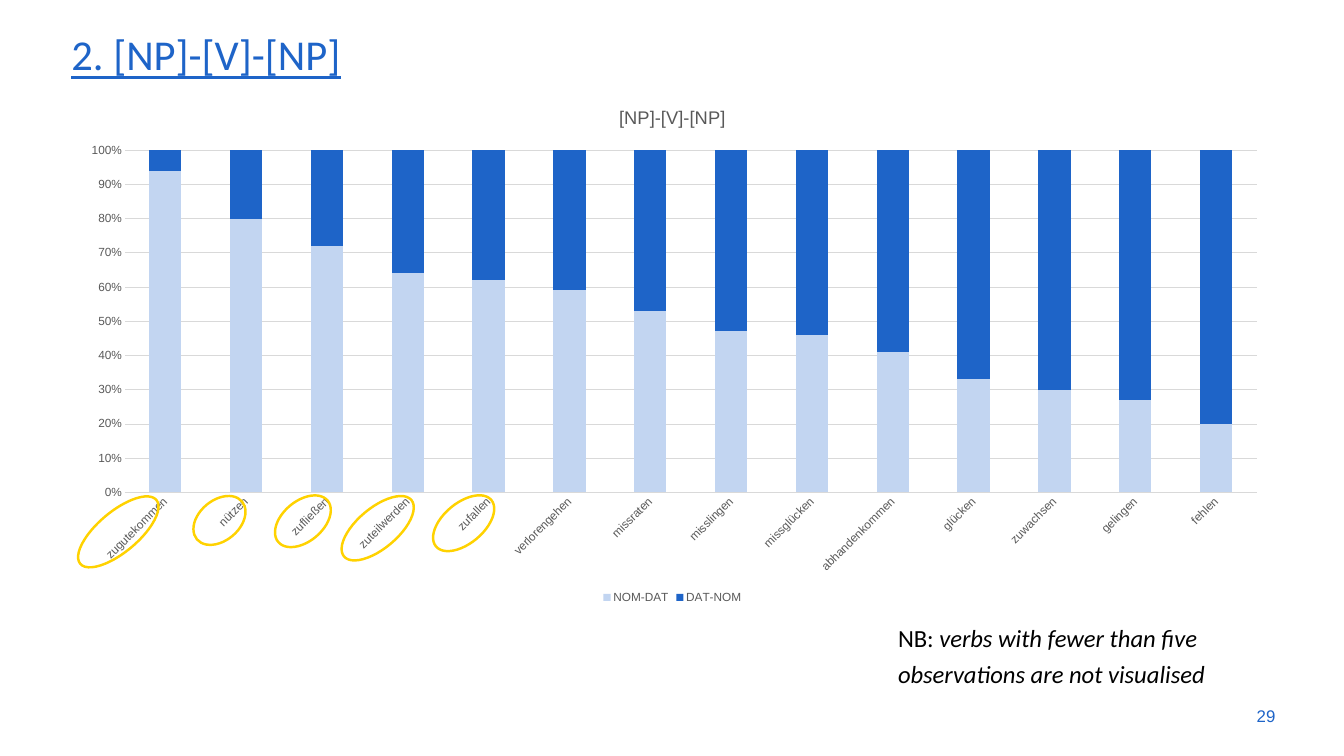
from lxml import etree
from pptx import Presentation
from pptx.chart.data import CategoryChartData
from pptx.dml.color import RGBColor
from pptx.enum.chart import XL_CHART_TYPE, XL_LEGEND_POSITION, XL_TICK_MARK
from pptx.enum.shapes import MSO_SHAPE
from pptx.enum.text import MSO_ANCHOR, PP_ALIGN
from pptx.oxml.ns import qn
from pptx.util import Cm, Pt

STACKED = XL_CHART_TYPE.COLUMN_STACKED_100
BOTTOM = XL_LEGEND_POSITION.BOTTOM
NO_TICK = XL_TICK_MARK.NONE
OVAL = MSO_SHAPE.OVAL
TOP, MIDDLE = MSO_ANCHOR.TOP, MSO_ANCHOR.MIDDLE
LEFT, RIGHT = PP_ALIGN.LEFT, PP_ALIGN.RIGHT

HEX = {"blue": "1E64C8", "pale": "C2D5F1", "gold": "FFD200",
       "grey": "595959", "grid": "D9D9D9", "black": "000000"}

# Share of NOM-DAT order per verb, in percent
SHARES = {"zugutekommen": 94, "nützen": 80, "zufließen": 72,
          "zuteilwerden": 64, "zufallen": 62, "verlorengehen": 59,
          "missraten": 53, "misslingen": 47, "missglücken": 46,
          "abhandenkommen": 41, "glücken": 33, "zuwachsen": 30,
          "gelingen": 27, "fehlen": 20}

# Left, top and width of each ring, in cm
RINGS = [(2.46, 18.34, 3.56), (6.81, 17.93, 2.11), (9.7, 17.96, 2.31),
         (11.96, 18.21, 3.15), (15.32, 18.03, 2.59)]

# Inner plot area as fractions of the chart
PLOT = {"x": 0.05, "y": 0.12, "w": 0.93, "h": 0.66}


def color(name):
    return RGBColor.from_string(HEX[name])


def style(font, size, hue, face="Arial"):
    font.size = Pt(size)
    font.name = face
    font.color.rgb = color(hue)


def add_text(slide, box, parts, size, hue, face, align=LEFT, anchor=TOP,
             space=1.0):
    frame = slide.shapes.add_textbox(*map(Cm, box)).text_frame
    frame.word_wrap = True
    frame.vertical_anchor = anchor
    para = frame.paragraphs[0]
    para.alignment = align
    para.line_spacing = space
    for part in parts:
        run = para.add_run()
        run.text = part
        style(run.font, size, hue, face)
    return para.runs


def add_ring(slide, left, top, width):
    ring = slide.shapes.add_shape(OVAL, Cm(left), Cm(top), Cm(width), Cm(1.45))
    ring.rotation = 320
    ring.shadow.inherit = False
    ring.fill.background()
    ring.line.color.rgb = color("gold")
    ring.line.width = Pt(2.5)


def draw_line(fmt):
    fmt.line.color.rgb = color("grid")
    fmt.line.width = Pt(0.75)


def set_plot(chart):
    """Fix the inner plot area so that the rings meet the labels."""
    area = chart._chartSpace.chart.plotArea
    for old in area.findall(qn("c:layout")):
        area.remove(old)
    layout = etree.Element(qn("c:layout"))
    manual = etree.SubElement(layout, qn("c:manualLayout"))
    rules = {"layoutTarget": "inner", "xMode": "edge", "yMode": "edge", **PLOT}
    for tag, val in rules.items():
        etree.SubElement(manual, qn("c:" + tag)).set("val", str(val))
    area.insert(0, layout)


def add_bars(slide, box):
    data = CategoryChartData(number_format="0")
    data.categories = list(SHARES)
    data.add_series("NOM-DAT", SHARES.values())
    data.add_series("DAT-NOM", [100 - share for share in SHARES.values()])
    chart = slide.shapes.add_chart(STACKED, *map(Cm, box), data).chart
    style(chart.font, 12, "grey")

    # Title and legend
    chart.has_title = True
    title = chart.chart_title.text_frame
    title.text = "[NP]-[V]-[NP]"
    run = title.paragraphs[0].runs[0]
    style(run.font, 18.6, "grey")
    run.font.bold = False
    chart.has_legend = True
    chart.legend.position = BOTTOM
    chart.legend.include_in_layout = False
    style(chart.legend.font, 12, "grey")

    # Axes
    verbs, scale = chart.category_axis, chart.value_axis
    for axis in (verbs, scale):
        axis.major_tick_mark = axis.minor_tick_mark = NO_TICK
        style(axis.tick_labels.font, 12, "grey")
    draw_line(verbs.format)
    body = verbs._element.find(qn("c:txPr")).find(qn("a:bodyPr"))
    body.set("rot", "-2700000")
    body.set("vert", "horz")
    scale.minimum_scale, scale.maximum_scale = 0, 1
    scale.major_unit = 0.1
    scale.tick_labels.number_format = "0%"
    scale.tick_labels.number_format_is_linked = False
    scale.format.line.fill.background()
    draw_line(scale.major_gridlines.format)

    # Columns
    plot = chart.plots[0]
    plot.gap_width, plot.overlap = 150, 100
    plot.vary_by_categories = False
    for series, hue in zip(plot.series, ("pale", "blue")):
        series.format.fill.solid()
        series.format.fill.fore_color.rgb = color(hue)
    set_plot(chart)


def main():
    prs = Presentation()
    prs.slide_width, prs.slide_height = Cm(48.16), Cm(27.1)
    slide = prs.slides.add_slide(prs.slide_layouts[6])

    # Heading in small capitals
    head = add_text(slide, (2.31, 0.71, 43.64, 2.39), ["2. [np]-[v]-[np]"],
                    54, "blue", "Calibri", anchor=MIDDLE, space=0.9)[0]
    head.font.underline = True
    head._r.get_or_add_rPr().set("cap", "small")

    # Chart and rings around the first verbs
    add_bars(slide, (2.29, 3.15, 43.61, 18.59))
    for ring in RINGS:
        add_ring(slide, *ring)

    # Note and page number
    note = add_text(slide, (31.93, 22, 14.02, 2.69),
                    ["NB: ", "verbs with fewer than five observations "
                     "are not visualised"],
                    25, "black", "Calibri", space=1.2)
    note[1].font.italic = True
    add_text(slide, (43.38, 24.94, 2.57, 1.45), ["29"], 17.1, "blue",
             "Arial", RIGHT, MIDDLE)

    prs.save("out.pptx")


if __name__ == "__main__":
    main()
